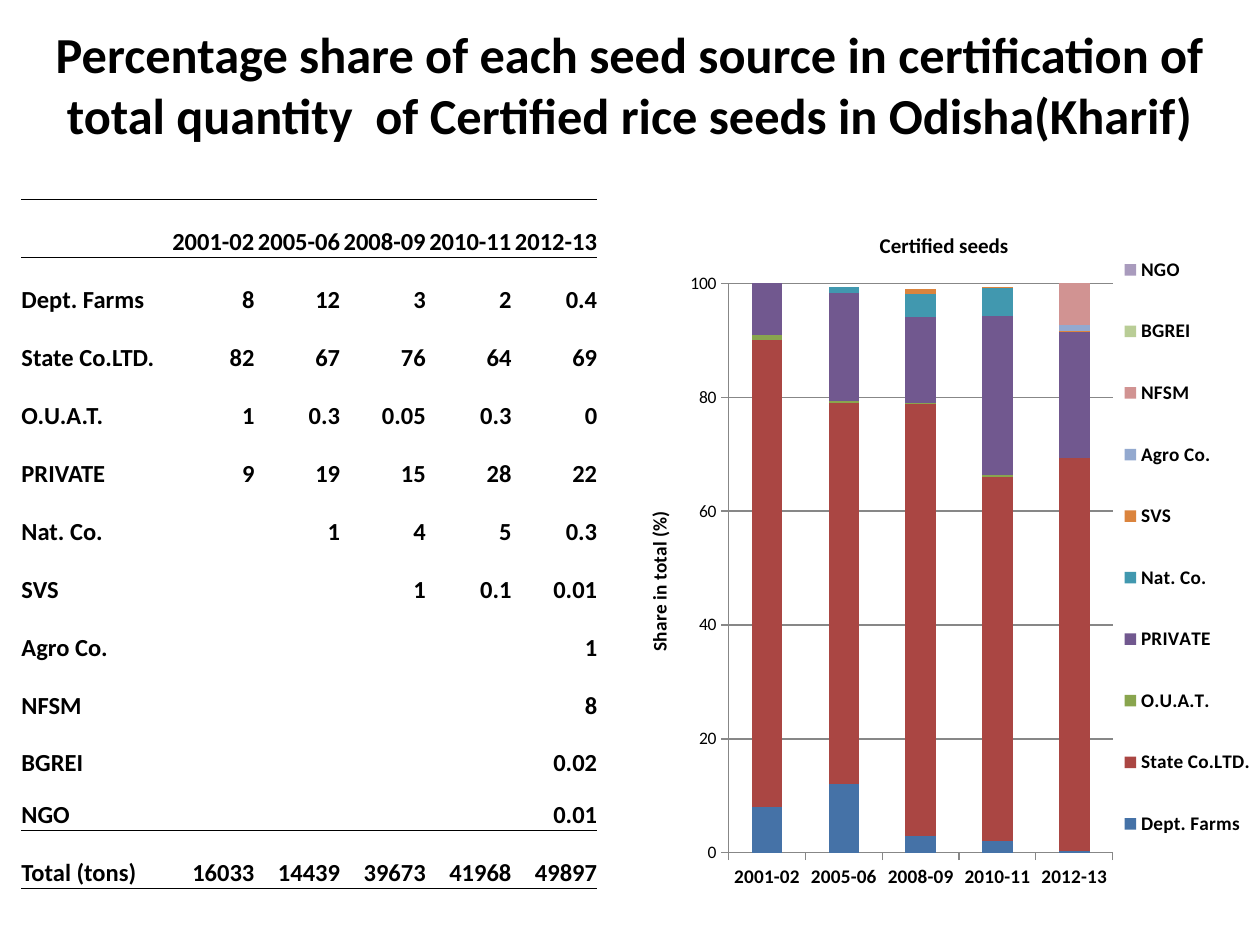
from lxml.etree import SubElement
from pptx import Presentation
from pptx.chart.data import CategoryChartData
from pptx.dml.color import RGBColor
from pptx.enum.chart import XL_CHART_TYPE as CT, XL_LEGEND_POSITION as LP, XL_TICK_MARK as TM
from pptx.enum.text import MSO_ANCHOR as MA, PP_ALIGN as PA
from pptx.oxml import parse_xml
from pptx.oxml.ns import nsdecls, qn
from pptx.util import Inches, Pt

TITLE = ("Percentage share of each seed source in certification of "
         "total quantity  of Certified rice seeds in Odisha(Kharif)")
YEARS = ["2001-02", "2005-06", "2008-09", "2010-11", "2012-13"]
SOURCES = [
    ("Dept. Farms", [8, 12, 3, 2, 0.4], "4572A7"),
    ("State Co.LTD.", [82, 67, 76, 64, 69], "AA4643"),
    ("O.U.A.T.", [1, 0.3, 0.05, 0.3, 0], "89A54E"),
    ("PRIVATE", [9, 19, 15, 28, 22], "71588F"),
    ("Nat. Co.", [None, 1, 4, 5, 0.3], "4198AF"),
    ("SVS", [None, None, 1, 0.1, 0.01], "DB843D"),
    ("Agro Co.", [None, None, None, None, 1], "93A9CF"),
    ("NFSM", [None, None, None, None, 8], "D19392"),
    ("BGREI", [None, None, None, None, 0.02], "B9CD96"),
    ("NGO", [None, None, None, None, 0.01], "A99BBD"),
]
TOTALS = [16033, 14439, 39673, 41968, 49897]
CHART_TITLE, AXIS_TITLE = "Certified seeds", "Share in total (%)"

THEME = {"font": "Calibri", "ink": "000000", "grid": "878787", "title": 28.8,
         "table": 14, "chart_title": 12, "label": 11, "tick": 10, "rule": 0.5}
W, H = 10, 7.5
TABLE_X, TOP = 0.17, 1.58
COLS = [1.09, 0.76] + [0.68] * 4
ROW_H, NGO_H = 0.46, 0.41
CHART_BOX = (4.92, TOP, 5.08, 5.58)
PLOT = {"x": 0.17, "y": 0.12, "w": 0.6, "h": 0.81}
LEGEND = {"x": 0.79, "y": 0.03, "w": 0.21, "h": 0.93}
CHART_TITLE_AT = {"x": 0.4, "y": 0.04}


def style(font, size, bold=True):
    font.name, font.size, font.bold = THEME["font"], Pt(size), bold
    font.color.rgb = RGBColor.from_string(THEME["ink"])


def write(tf, text, size, align=PA.LEFT, bold=True):
    p = tf.paragraphs[0]
    p.alignment = align
    style(p.font, size, bold)
    r = p.add_run()
    r.text = text
    style(r.font, size, bold)


def border(cell, side, shown):
    ln = SubElement(cell._tc.get_or_add_tcPr(), qn(f"a:ln{side}"))
    if not shown:
        SubElement(ln, qn("a:noFill"))
        return
    ln.set("w", str(Pt(THEME["rule"])))
    fill = SubElement(ln, qn("a:solidFill"))
    SubElement(fill, qn("a:srgbClr")).set("val", THEME["ink"])


def place(el, after, inner=False, **share):
    for old in el.findall(qn("c:layout")):
        el.remove(old)
    target = '<c:layoutTarget val="inner"/>' if inner else ""
    modes = "".join(f'<c:{k}Mode val="edge"/>' for k in "xy")
    sizes = "".join(f'<c:{k} val="{v}"/>' for k, v in share.items())
    layout = parse_xml(f'<c:layout {nsdecls("c")}><c:manualLayout>{target}{modes}{sizes}'
                       '</c:manualLayout></c:layout>')
    if after:
        el.find(qn(after)).addnext(layout)
    else:
        el.insert(0, layout)


def add_title(s):
    tf = s.shapes.add_textbox(0, 0, Inches(W), Inches(1.33)).text_frame
    tf.word_wrap, tf.vertical_anchor = True, MA.MIDDLE
    write(tf, TITLE, THEME["title"], PA.CENTER)


def add_table(s):
    rows = [["", *YEARS]] + [[name, *vals] for name, vals, _ in SOURCES]
    rows.append(["Total (tons)", *TOTALS])
    n = len(rows)
    heights = [NGO_H if row[0] == "NGO" else ROW_H for row in rows]
    ruled = {0, 1, n - 1, n}
    tbl = s.shapes.add_table(n, len(COLS), Inches(TABLE_X), Inches(TOP),
                             Inches(sum(COLS)), Inches(sum(heights))).table
    tbl.first_row = tbl.horz_banding = False
    for col, w in zip(tbl.columns, COLS):
        col.width = Inches(w)
    for i, row in enumerate(rows):
        tbl.rows[i].height = Inches(heights[i])
        for j, value in enumerate(row):
            cell = tbl.cell(i, j)
            cell.margin_left = cell.margin_right = cell.margin_top = cell.margin_bottom = 0
            cell.vertical_anchor = MA.BOTTOM
            write(cell.text_frame, "" if value is None else str(value),
                  THEME["table"], PA.RIGHT if j else PA.LEFT)
            for side, shown in (("L", False), ("R", False), ("T", i in ruled), ("B", i + 1 in ruled)):
                border(cell, side, shown)
            cell.fill.background()


def add_chart(s):
    data = CategoryChartData(number_format="General")
    data.categories = YEARS
    for name, vals, _ in SOURCES:
        data.add_series(name, vals)
    chart = s.shapes.add_chart(CT.COLUMN_STACKED, *map(Inches, CHART_BOX), data).chart
    style(chart.font, THEME["tick"], False)

    chart.has_title = True
    write(chart.chart_title.text_frame, CHART_TITLE, THEME["chart_title"], PA.CENTER)
    place(chart.chart_title._element, "c:tx", **CHART_TITLE_AT)

    plot = chart.plots[0]
    plot.gap_width, plot.overlap, plot.vary_by_categories = 150, 100, False
    for series, (_, _, color) in zip(plot.series, SOURCES):
        series.format.fill.solid()
        series.format.fill.fore_color.rgb = RGBColor.from_string(color)
    place(chart._chartSpace.chart.plotArea, None, inner=True, **PLOT)

    cat, val = chart.category_axis, chart.value_axis
    style(cat.tick_labels.font, THEME["label"])
    style(val.tick_labels.font, THEME["tick"], False)
    val.minimum_scale, val.maximum_scale, val.major_unit = 0, 100, 20
    val.tick_labels.number_format, val.tick_labels.number_format_is_linked = "0", False
    val.has_major_gridlines = True
    for axis in (cat, val):
        axis.major_tick_mark = TM.OUTSIDE
    for item in (cat, val, val.major_gridlines):
        item.format.line.color.rgb = RGBColor.from_string(THEME["grid"])
        item.format.line.width = Pt(0.75)
    val.has_title = True
    write(val.axis_title.text_frame, AXIS_TITLE, THEME["label"], PA.CENTER)
    val.axis_title._element.xpath(".//a:bodyPr")[0].set("rot", "-5400000")

    chart.has_legend = True
    chart.legend.position, chart.legend.include_in_layout = LP.RIGHT, False
    style(chart.legend.font, THEME["label"])
    place(chart.legend._element, "c:legendPos", **LEGEND)


def main():
    prs = Presentation()
    prs.slide_width, prs.slide_height = Inches(W), Inches(H)
    s = prs.slides.add_slide(prs.slide_layouts[6])
    add_title(s)
    add_table(s)
    add_chart(s)
    prs.save("out.pptx")


if __name__ == "__main__":
    main()
